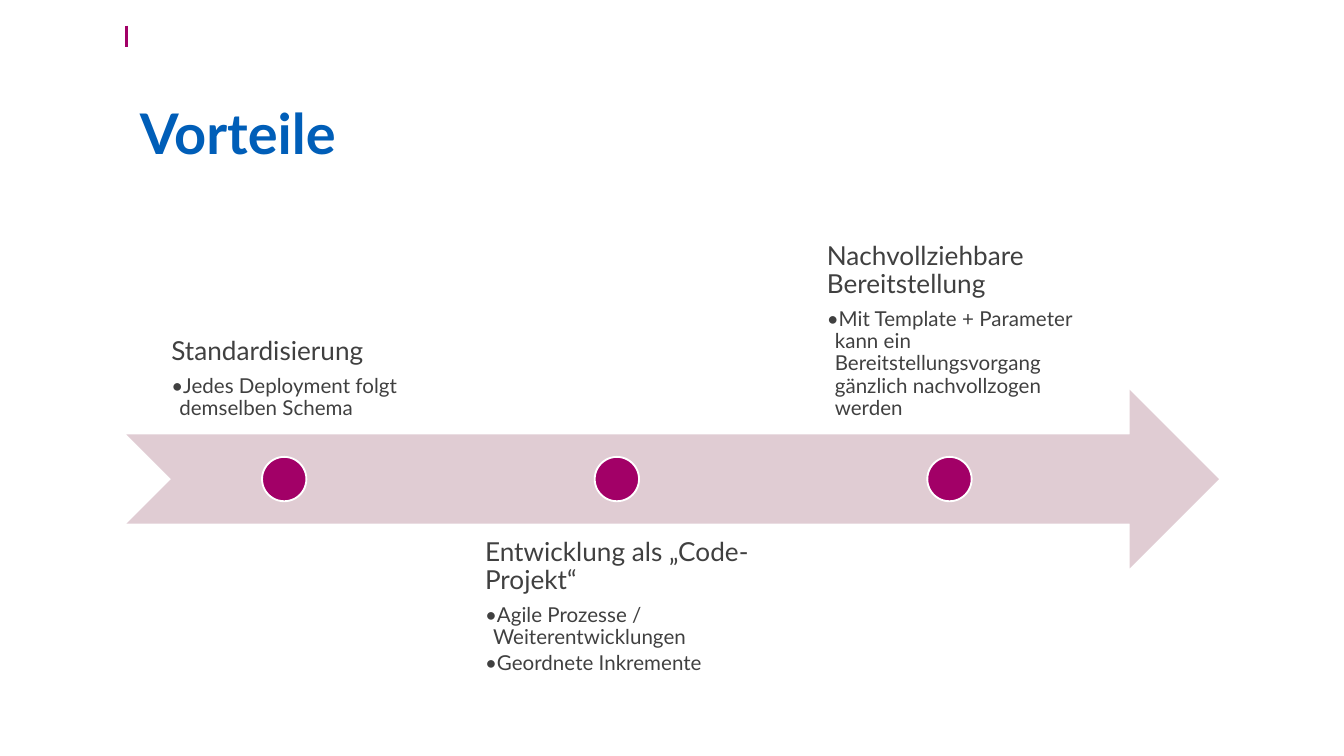
from lxml import etree
from pptx import Presentation
from pptx.dml.color import RGBColor
from pptx.enum import shapes, text
from pptx.oxml import ns
from pptx.util import Inches, Pt

COLORS = {"accent": "A20067", "arrow": "E0CCD3", "body": "404040",
          "title": "005EB8", "white": "FFFFFF"}
FONT = "Lato"
LEFT, WIDTH = 0.94, 8.13
ARROW_TOP, ARROW_H = 2.9, 1.33
BOX_W, DOT, STEP = 2.35, 0.33, 2.475
MILESTONES = [
    ("Standardisierung", ["Jedes Deployment folgt demselben Schema"]),
    ("Entwicklung als „Code-Projekt“",
     ["Agile Prozesse / Weiterentwicklungen", "Geordnete Inkremente"]),
    ("Nachvollziehbare Bereitstellung",
     ["Mit Template + Parameter kann ein Bereitstellungsvorgang "
      "gänzlich nachvollzogen werden"]),
]


def rgb(name):
    return RGBColor.from_string(COLORS[name])


def add_filled(kind, x, y, w, h, fill):
    """Add a preset shape with a plain fill, no line and no shadow."""
    sp = s.shapes.add_shape(kind, Inches(x), Inches(y), Inches(w), Inches(h))
    sp.shadow.inherit = False
    sp.fill.solid()
    sp.fill.fore_color.rgb = rgb(fill)
    sp.line.fill.background()
    return sp


prs = Presentation()
prs.slide_width = Inches(10)
prs.slide_height = prs.slide_width * 9 // 16
s = prs.slides.add_slide(prs.slide_layouts[5])

# Title and the small mark above it
title = s.shapes.title
title.left, title.top = Inches(LEFT), Inches(0.74)
title.width, title.height = Inches(WIDTH), Inches(0.53)
tf = title.text_frame
tf.text = "Vorteile"
tf.vertical_anchor = text.MSO_ANCHOR.TOP
tf.auto_size = text.MSO_AUTO_SIZE.NONE
p = tf.paragraphs[0]
p.alignment = text.PP_ALIGN.LEFT
p.line_spacing = 0.9
r = p.runs[0]
r.font.name, r.font.size, r.font.bold = FONT, Pt(30), True
r.font.color.rgb = rgb("title")

mark = s.shapes.add_connector(shapes.MSO_CONNECTOR.STRAIGHT, Inches(LEFT),
                              Inches(0.19), Inches(LEFT), Inches(0.35))
mark.line.color.rgb = rgb("accent")
mark.line.width = Pt(1.5)
etree.SubElement(mark._element.spPr, ns.qn("a:effectLst"))

# Timeline
add_filled(shapes.MSO_SHAPE.NOTCHED_RIGHT_ARROW,
           LEFT, ARROW_TOP, WIDTH, ARROW_H, "arrow")

for i, (heading, points) in enumerate(MILESTONES):
    x = LEFT + i * STEP
    below = i % 2 == 1
    # Texts alternate between the top and bottom edge of the arrow's shaft
    y = ARROW_TOP + (0.75 * ARROW_H if below else 0.25 * ARROW_H - ARROW_H)
    box = s.shapes.add_textbox(Inches(x), Inches(y), Inches(BOX_W), Inches(ARROW_H))
    tf = box.text_frame
    tf.word_wrap = True
    tf.vertical_anchor = text.MSO_ANCHOR.TOP if below else text.MSO_ANCHOR.BOTTOM
    tf.margin_left = tf.margin_right = tf.margin_top = tf.margin_bottom = Inches(0.11)
    tf._txBody.bodyPr.set("anchorCtr", "1")
    tf.text = "\n".join([heading] + points)
    for n, p in enumerate(tf.paragraphs):
        p.line_spacing = 0.9
        p.space_after = Pt(2 if n else 5)
        if n:
            p.level = 1
            pPr = p._p.get_or_add_pPr()
            pPr.set("marL", str(Inches(0.06)))
            pPr.set("indent", str(Inches(-0.06)))
            etree.SubElement(pPr, ns.qn("a:buFont"), typeface=FONT)
            etree.SubElement(pPr, ns.qn("a:buChar"), char="•")
        for r in p.runs:
            r.font.name, r.font.size = FONT, Pt(11 if n else 14)
            r.font.color.rgb = rgb("body")

    dot = add_filled(shapes.MSO_SHAPE.OVAL, x + (BOX_W - DOT) / 2,
                     ARROW_TOP + (ARROW_H - DOT) / 2, DOT, DOT, "accent")
    dot.line.color.rgb = rgb("white")
    dot.line.width = Pt(1)

prs.save("out.pptx")
